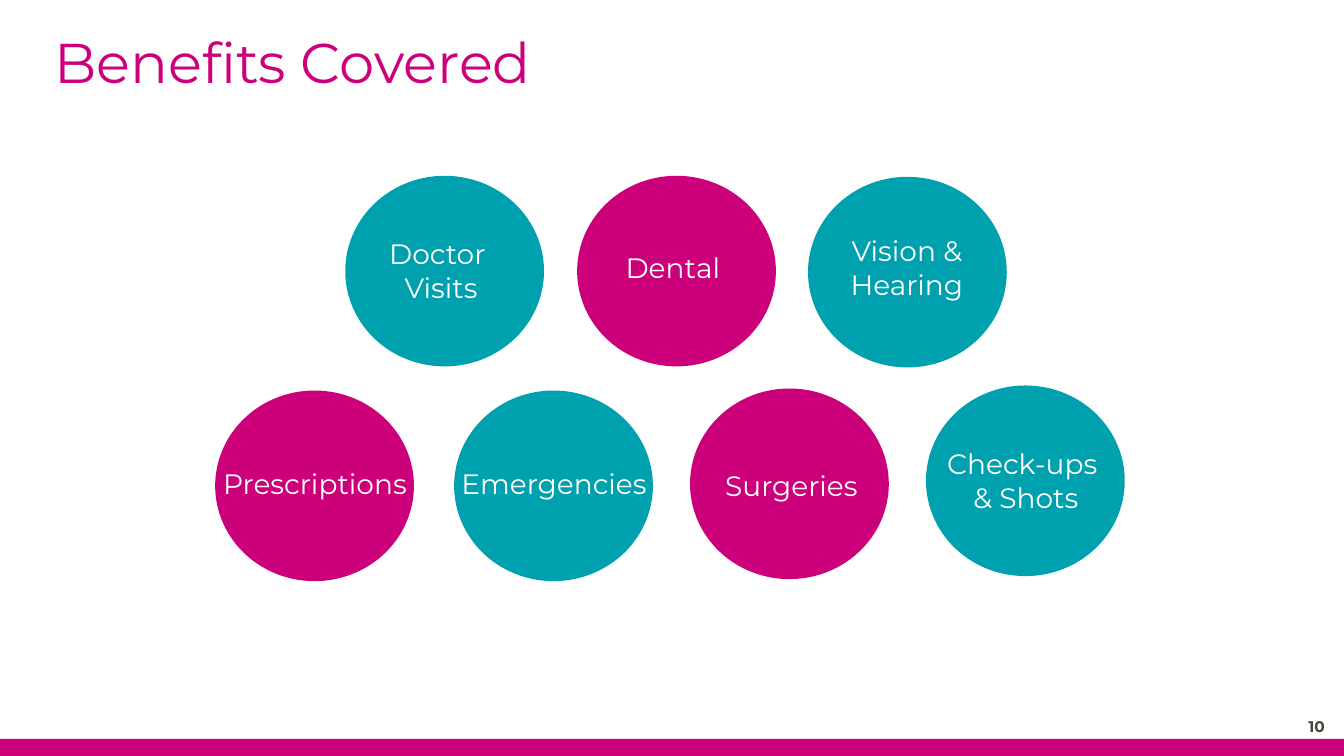
"""Build the "Benefits Covered" slide: seven labelled circles in two rows."""
from dataclasses import dataclass

from pptx import Presentation
from pptx.dml.color import RGBColor
from pptx.enum import shapes, text
from pptx.util import Inches, Pt


@dataclass(frozen=True)
class Theme:
    font: str = "Montserrat"
    magenta: RGBColor = RGBColor(0xCD, 0x00, 0x7B)
    teal: RGBColor = RGBColor(0x00, 0xA1, 0xAF)
    white: RGBColor = RGBColor(0xFF, 0xFF, 0xFF)
    dark: RGBColor = RGBColor(0x47, 0x43, 0x37)
    title_size: int = 40
    label_size: int = 20
    number_size: int = 11


theme = Theme()


def write(frame, wording, size, color, align, anchor, bold=False, inset=None):
    """Fill a text frame and format its paragraphs and runs."""
    frame.text = wording
    frame.word_wrap = True
    frame.vertical_anchor = anchor
    if inset is not None:
        frame.margin_left = frame.margin_right = Inches(inset)
        frame.margin_top = frame.margin_bottom = Inches(inset)
    for paragraph in frame.paragraphs:
        paragraph.alignment = align
        for run in paragraph.runs:
            run.font.name = theme.font
            run.font.size = Pt(size)
            run.font.bold = bold
            run.font.color.rgb = color


def add_solid(kind, left, top, width, height, color):
    """Add a preset shape with a plain fill and no shadow."""
    solid = slide.shapes.add_shape(
        kind, Inches(left), Inches(top), Inches(width), Inches(height))
    solid.shadow.inherit = False
    solid.fill.solid()
    solid.fill.fore_color.rgb = color
    solid.line.color.rgb = color
    return solid


deck = Presentation()
deck.slide_width, deck.slide_height = Inches(13.33), Inches(7.5)
slide = deck.slides.add_slide(deck.slide_layouts[5])

title = slide.shapes.title
title.left, title.top = Inches(0.54), Inches(0.27)
title.width, title.height = Inches(10.93), Inches(0.67)
write(title.text_frame, "Benefits Covered", theme.title_size, theme.magenta,
      text.PP_ALIGN.LEFT, text.MSO_ANCHOR.BOTTOM, inset=0)

footer_band = add_solid(shapes.MSO_SHAPE.RECTANGLE, 0, 7.33, 13.35, 0.18, theme.magenta)
footer_band.line.fill.background()

benefits = [
    ("Doctor \nVisits", theme.teal, (3.44, 1.76), (3.51, 2.3, 1.73, 0.77)),
    ("Dental ", theme.magenta, (5.74, 1.76), (6.02, 2.44, 1.38, 0.44)),
    ("Vision & Hearing", theme.teal, (8.03, 1.77), (8.18, 2.27, 1.63, 0.77)),
    ("Prescriptions", theme.magenta, (2.15, 3.89), (1.91, 4.58, 2.43, 0.44)),
    ("Emergencies", theme.teal, (4.52, 3.89), (4.32, 4.58, 2.35, 0.44)),
    ("Surgeries", theme.magenta, (6.86, 3.87), (6.9, 4.6, 1.9, 0.44)),
    ("Check-ups \n& Shots", theme.teal, (9.2, 3.84), (9.06, 4.38, 2.23, 0.77)),
]
for benefit, color, corner, label_box in benefits:
    circle = add_solid(shapes.MSO_SHAPE.OVAL, *corner, 1.94, 1.86, color)
    circle.line.width = Pt(2.25)
    label = slide.shapes.add_textbox(*map(Inches, label_box))
    write(label.text_frame, benefit, theme.label_size, theme.white,
          text.PP_ALIGN.CENTER, text.MSO_ANCHOR.TOP)

page_number = slide.shapes.add_textbox(
    Inches(12.36), Inches(7.01), Inches(0.78), Inches(0.4))
write(page_number.text_frame, "10", theme.number_size, theme.dark,
      text.PP_ALIGN.RIGHT, text.MSO_ANCHOR.MIDDLE, bold=True, inset=0)

deck.save("out.pptx")
